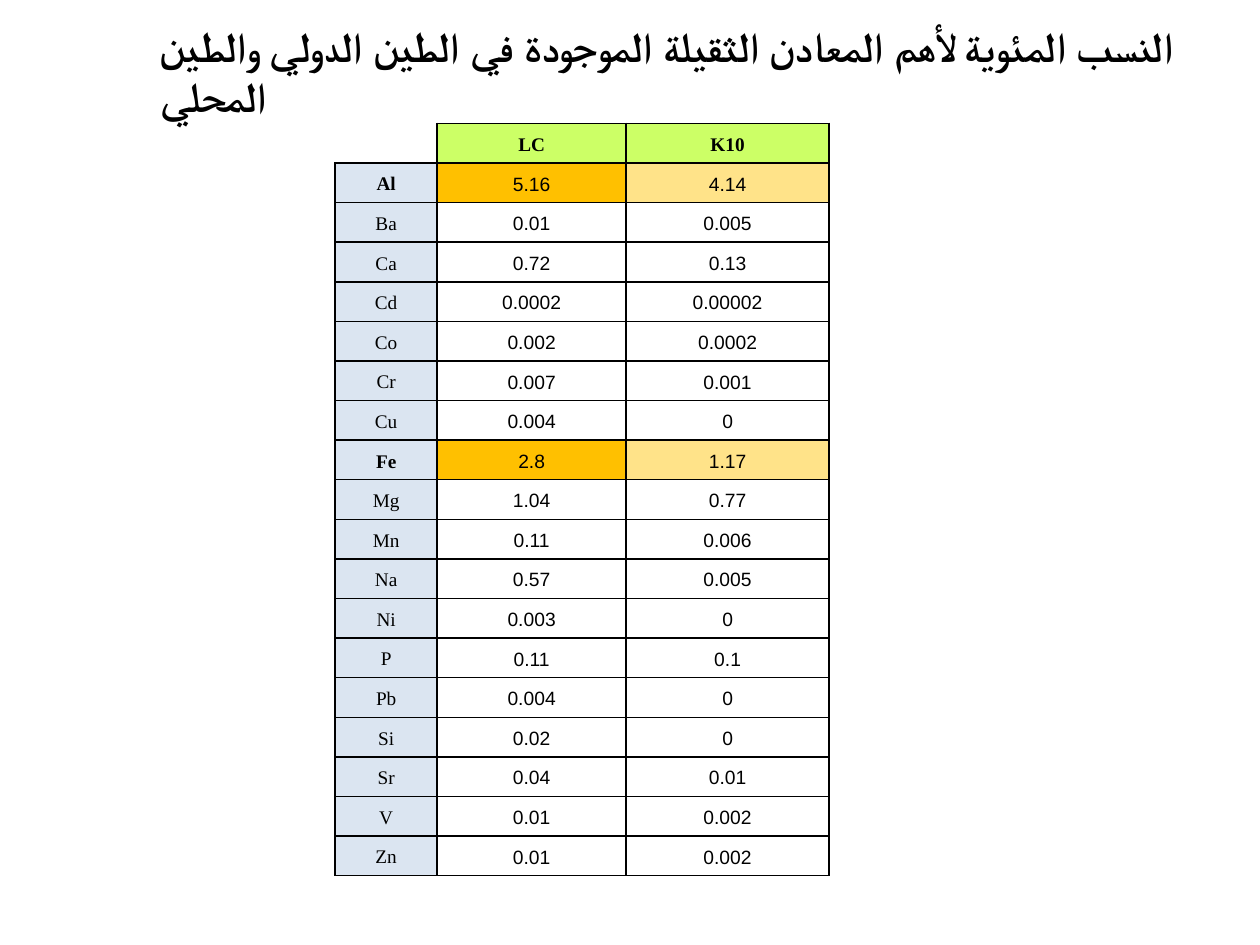
from lxml.etree import SubElement
from pptx import Presentation
from pptx.dml.color import RGBColor
from pptx.enum.text import MSO_ANCHOR, MSO_AUTO_SIZE, PP_ALIGN
from pptx.oxml.ns import qn
from pptx.util import Inches, Pt

TITLE = "النسب المئوية لأهم المعادن الثقيلة الموجودة في الطين الدولي والطين المحلي"
SERIF = "Times New Roman"
BLACK = "000000"
HEADER_FILL, ELEMENT_FILL = "CCFF66", "DBE5F1"
HIGHLIGHT_FILLS = ["FFC000", "FFE389"]
HIGHLIGHTED = {"Al", "Fe"}

HEADINGS = ["", "LC", "K10"]
METALS = [
    ("Al", "5.16", "4.14"),
    ("Ba", "0.01", "0.005"),
    ("Ca", "0.72", "0.13"),
    ("Cd", "0.0002", "0.00002"),
    ("Co", "0.002", "0.0002"),
    ("Cr", "0.007", "0.001"),
    ("Cu", "0.004", "0"),
    ("Fe", "2.8", "1.17"),
    ("Mg", "1.04", "0.77"),
    ("Mn", "0.11", "0.006"),
    ("Na", "0.57", "0.005"),
    ("Ni", "0.003", "0"),
    ("P", "0.11", "0.1"),
    ("Pb", "0.004", "0"),
    ("Si", "0.02", "0"),
    ("Sr", "0.04", "0.01"),
    ("V", "0.01", "0.002"),
    ("Zn", "0.01", "0.002"),
]
COLUMN_WIDTHS = [0.81, 1.5, 1.61]
TABLE_HEIGHT = 5.97
NO_STYLE = "{2D5ABB26-0587-4C30-8999-92F81FD0307C}"


def color(value):
    return RGBColor.from_string(value)


def write_text(frame, text, size=11, bold=False, align=PP_ALIGN.CENTER,
               spacing=1.0, complex_font=SERIF):
    """Write one right-to-left paragraph; digits in it use the complex font."""
    para = frame.paragraphs[0]
    para.alignment = align
    para.line_spacing = spacing
    para._p.get_or_add_pPr().set("rtl", "1")
    span = para.add_run()
    span.text = text
    span.font.name = SERIF
    span.font.size = Pt(size)
    span.font.bold = bold
    span.font.color.rgb = color(BLACK)
    SubElement(span._r.get_or_add_rPr(), qn("a:cs"), typeface=complex_font)


def set_borders(cell, sides):
    properties = cell._tc.get_or_add_tcPr()
    for index, side in enumerate(sides):
        line = properties.makeelement(qn(f"a:ln{side}"), {"w": str(Pt(1))})
        fill = SubElement(line, qn("a:solidFill"))
        SubElement(fill, qn("a:srgbClr"), val=BLACK)
        properties.insert(index, line)


def fill_cell(cell, text, fill=None, **text_format):
    cell.vertical_anchor = MSO_ANCHOR.MIDDLE
    cell.margin_left = cell.margin_right = Inches(0.07)
    cell.margin_top = cell.margin_bottom = 0
    if fill:
        cell.fill.solid()
        cell.fill.fore_color.rgb = color(fill)
    else:
        cell.fill.background()
    # The empty corner has only its inner edges
    set_borders(cell, "LRTB" if text else "RB")
    if text:
        write_text(cell.text_frame, text, spacing=1.15, **text_format)


def add_title(page):
    box = page.shapes.title
    box.left, box.top = Inches(1.17), Inches(0.31)
    box.width, box.height = Inches(8.47), Inches(0.5)
    frame = box.text_frame
    frame.word_wrap = True
    frame.auto_size = MSO_AUTO_SIZE.NONE
    frame.vertical_anchor = MSO_ANCHOR.MIDDLE
    write_text(frame, TITLE, size=24, bold=True, align=PP_ALIGN.LEFT)


def add_metals_table(page):
    row_count = len(METALS) + 1
    holder = page.shapes.add_table(
        row_count, len(COLUMN_WIDTHS), Inches(2.66), Inches(0.98),
        Inches(sum(COLUMN_WIDTHS)), Inches(TABLE_HEIGHT))
    table = holder.table
    table.first_row = table.horz_banding = False
    table._tbl.tblPr.find(qn("a:tableStyleId")).text = NO_STYLE
    for column, width in zip(table.columns, COLUMN_WIDTHS):
        column.width = Inches(width)
    for row in table.rows:
        row.height = Inches(TABLE_HEIGHT / row_count)

    # Header row
    for index, heading in enumerate(HEADINGS):
        fill_cell(table.cell(0, index), heading,
                  fill=HEADER_FILL if heading else None, bold=True)

    # One row per element, the major metals highlighted
    for index, (element, *values) in enumerate(METALS, start=1):
        major = element in HIGHLIGHTED
        fill_cell(table.cell(index, 0), element, fill=ELEMENT_FILL, bold=major)
        for column, value in enumerate(values, start=1):
            fill_cell(table.cell(index, column), value,
                      fill=HIGHLIGHT_FILLS[column - 1] if major else None,
                      complex_font="Arial")


def main():
    deck = Presentation()
    deck.slide_width, deck.slide_height = Inches(10), Inches(7.5)
    page = deck.slides.add_slide(deck.slide_layouts[5])
    add_metals_table(page)
    add_title(page)
    deck.save("out.pptx")


if __name__ == "__main__":
    main()
